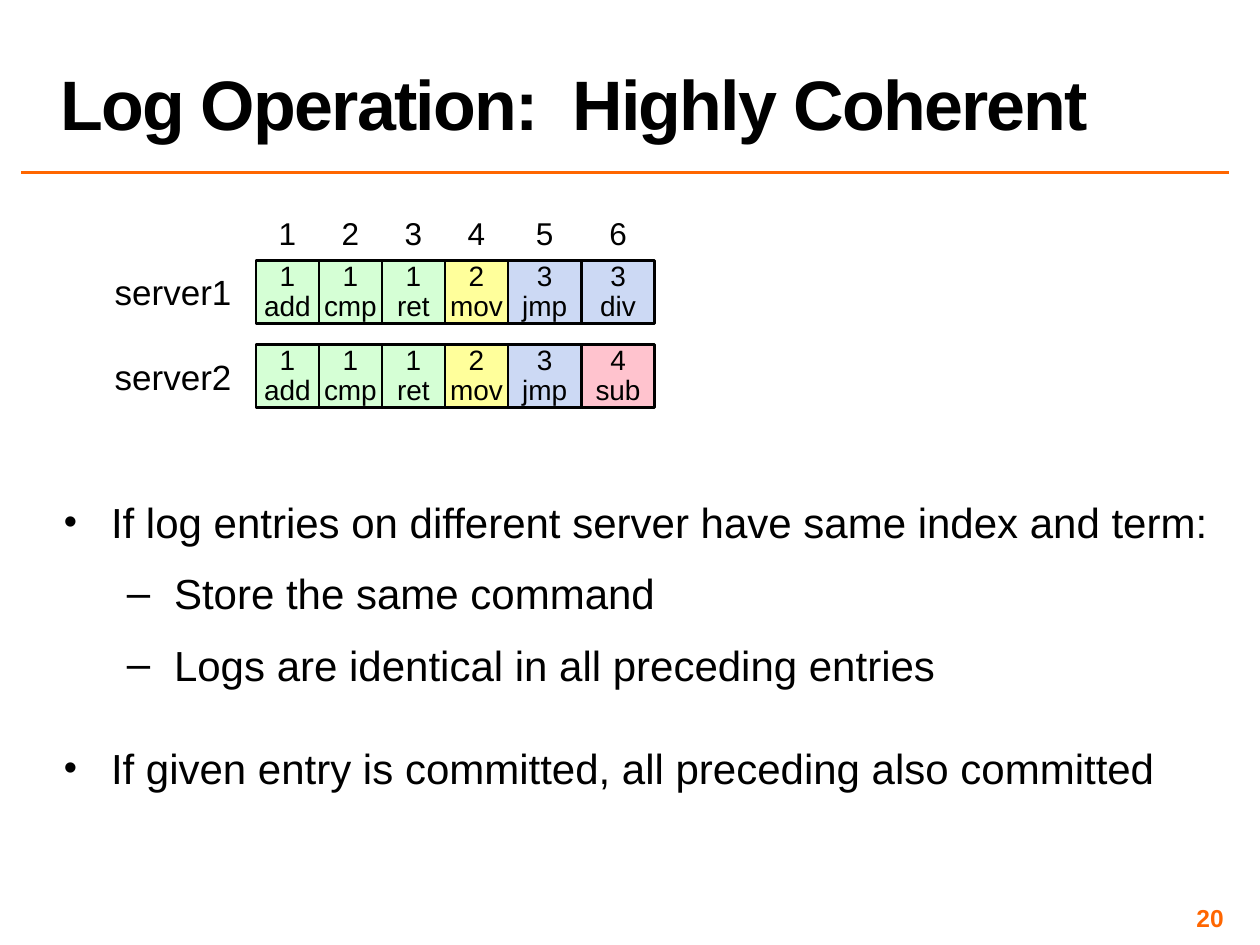
"""Build a slide showing why replicated server logs are highly coherent."""
from typing import NamedTuple

from lxml import etree
from pptx import Presentation
from pptx import util as u
from pptx.dml.color import RGBColor
from pptx.enum import shapes, text
from pptx.oxml import ns

BLACK = RGBColor(0x00, 0x00, 0x00)
ORANGE = RGBColor(0xFF, 0x66, 0x00)
GREEN = RGBColor(0xD5, 0xFF, 0xD5)
YELLOW = RGBColor(0xFF, 0xFF, 0x9B)
BLUE = RGBColor(0xCC, 0xD9, 0xF4)
PINK = RGBColor(0xFF, 0xC3, 0xCE)
TERM_FILLS = {1: GREEN, 2: YELLOW, 3: BLUE, 4: PINK}

LOG_LEFT, LOG_TOP, ROW_PITCH, CELL_HEIGHT = 5.16, 5.25, 1.7, 1.27
COLUMN_WIDTHS = (1.27, 1.27, 1.27, 1.27, 1.48, 1.48)
COLUMN_LEFTS = [LOG_LEFT + sum(COLUMN_WIDTHS[:i]) for i in range(len(COLUMN_WIDTHS))]


class Entry(NamedTuple):
    term: int
    command: str


class Log(NamedTuple):
    server: str
    entries: tuple[Entry, ...]


class Bullet(NamedTuple):
    text: str
    level: int
    before: float
    after: float


SHARED = (Entry(1, "add"), Entry(1, "cmp"), Entry(1, "ret"), Entry(2, "mov"), Entry(3, "jmp"))
LOGS = (
    Log("server1", SHARED + (Entry(3, "div"),)),
    Log("server2", SHARED + (Entry(4, "sub"),)),
)
BULLETS = (
    Bullet("If log entries on different server have same index and term:", 0, 12, 6),
    Bullet("Store the same command", 1, 6, 6),
    Bullet("Logs are identical in all preceding entries", 1, 6, 6),
    Bullet("If given entry is committed, all preceding also committed", 0, 24, 0),
)


def write(p, content: str, size: float, color=BLACK, bold=False, align=text.PP_ALIGN.LEFT,
          line_spacing=None, tracking=0) -> None:
    """Fill a paragraph with formatted text."""
    p.text = content
    p.alignment = align
    if line_spacing is not None:
        p.line_spacing = line_spacing
    for r in p.runs:
        r.font.name = "Arial"
        r.font.size = u.Pt(size)
        r.font.bold = bold
        r.font.color.rgb = color
        if tracking:
            r.font._element.set("spc", str(tracking))


def set_frame(tf, anchor=text.MSO_ANCHOR.TOP, inset=None, wrap=True) -> None:
    """Set the anchor, wrapping and optional equal insets of a text frame."""
    tf.word_wrap = wrap
    tf.vertical_anchor = anchor
    if inset is not None:
        tf.margin_left = tf.margin_right = tf.margin_top = tf.margin_bottom = u.Cm(inset)


def add_text(parent, box: tuple[float, float, float, float], content: str, size: float,
             anchor=text.MSO_ANCHOR.TOP, inset=None, wrap=True, **style) -> None:
    """Add a text box with one formatted paragraph."""
    tf = parent.add_textbox(*map(u.Cm, box)).text_frame
    set_frame(tf, anchor, inset, wrap)
    write(tf.paragraphs[0], content, size, **style)


def add_entry(parent, entry: Entry, left: float, top: float, width: float) -> None:
    """Add a log cell coloured by its term."""
    sp = parent.add_shape(shapes.MSO_SHAPE.RECTANGLE,
                          *map(u.Cm, (left, top, width, CELL_HEIGHT)))
    sp.shadow.inherit = False
    sp.fill.solid()
    sp.fill.fore_color.rgb = TERM_FILLS[entry.term]
    sp.line.color.rgb = BLACK
    sp.line.width = u.Pt(1.5)
    set_frame(sp.text_frame, text.MSO_ANCHOR.MIDDLE, inset=0)
    write(sp.text_frame.paragraphs[0], f"{entry.term}\n{entry.command}", 16,
          align=text.PP_ALIGN.CENTER, line_spacing=u.Pt(17))


def add_logs(s) -> None:
    """Add the index row and one row of entries for each server."""
    group = s.shapes.add_group_shape().shapes
    for index, (left, width) in enumerate(zip(COLUMN_LEFTS, COLUMN_WIDTHS), 1):
        add_text(group, (left, 4.19, width, 1.02), str(index), 18, align=text.PP_ALIGN.CENTER)
    for row, log in enumerate(LOGS):
        top = LOG_TOP + row * ROW_PITCH
        for entry, left, width in zip(log.entries, COLUMN_LEFTS, COLUMN_WIDTHS):
            add_entry(group, entry, left, top, width)
        add_text(s.shapes, (2.31, top + 0.21, 2.36, 0.86), log.server, 20, inset=0,
                 wrap=False, align=text.PP_ALIGN.CENTER)


def add_bullets(s) -> None:
    """Add the two-level bullet list."""
    tf = s.shapes.add_textbox(*map(u.Cm, (1.04, 9.88, 24.36, 8.46))).text_frame
    set_frame(tf)
    for i, bullet in enumerate(BULLETS):
        p = tf.add_paragraph() if i else tf.paragraphs[0]
        write(p, bullet.text, 24)
        p.level = bullet.level
        p.space_before, p.space_after = u.Pt(bullet.before), u.Pt(bullet.after)
        pPr = p._p.get_or_add_pPr()
        pPr.set("marL", str(u.Cm(0.95 + 1.27 * bullet.level)))
        pPr.set("indent", str(u.Cm(-0.95)))
        color = etree.SubElement(pPr, ns.qn("a:buClr"))
        etree.SubElement(color, ns.qn("a:srgbClr"), val=str(BLACK))
        etree.SubElement(pPr, ns.qn("a:buSzPct"), val="100000" if bullet.level else "90000")
        etree.SubElement(pPr, ns.qn("a:buFont"), typeface="Arial")
        etree.SubElement(pPr, ns.qn("a:buChar"), char="–" if bullet.level else "•")


def add_rule(s) -> None:
    """Add the line below the title."""
    line = s.shapes.add_connector(shapes.MSO_CONNECTOR.STRAIGHT,
                                  *map(u.Cm, (0.43, 3.48, 24.77, 3.48)))
    line.line.color.rgb = ORANGE
    line.line.width = u.Pt(2)
    etree.SubElement(line._element.spPr, ns.qn("a:effectLst"))


def main() -> None:
    """Build and save the slide."""
    prs = Presentation()
    prs.slide_width, prs.slide_height = u.Cm(25.4), u.Cm(19.05)
    s = prs.slides.add_slide(prs.slide_layouts[6])
    add_rule(s)
    add_text(s.shapes, (18.85, 18.21, 5.92, 0.58), "20", 14, text.MSO_ANCHOR.MIDDLE,
             inset=0.1, color=ORANGE, bold=True, align=text.PP_ALIGN.RIGHT)
    add_text(s.shapes, (0.97, 0.05, 23.8, 2.97), "Log Operation:  Highly Coherent", 40,
             text.MSO_ANCHOR.BOTTOM, bold=True, line_spacing=0.8, tracking=-100)
    add_logs(s)
    add_bullets(s)
    prs.save("out.pptx")


if __name__ == "__main__":
    main()
